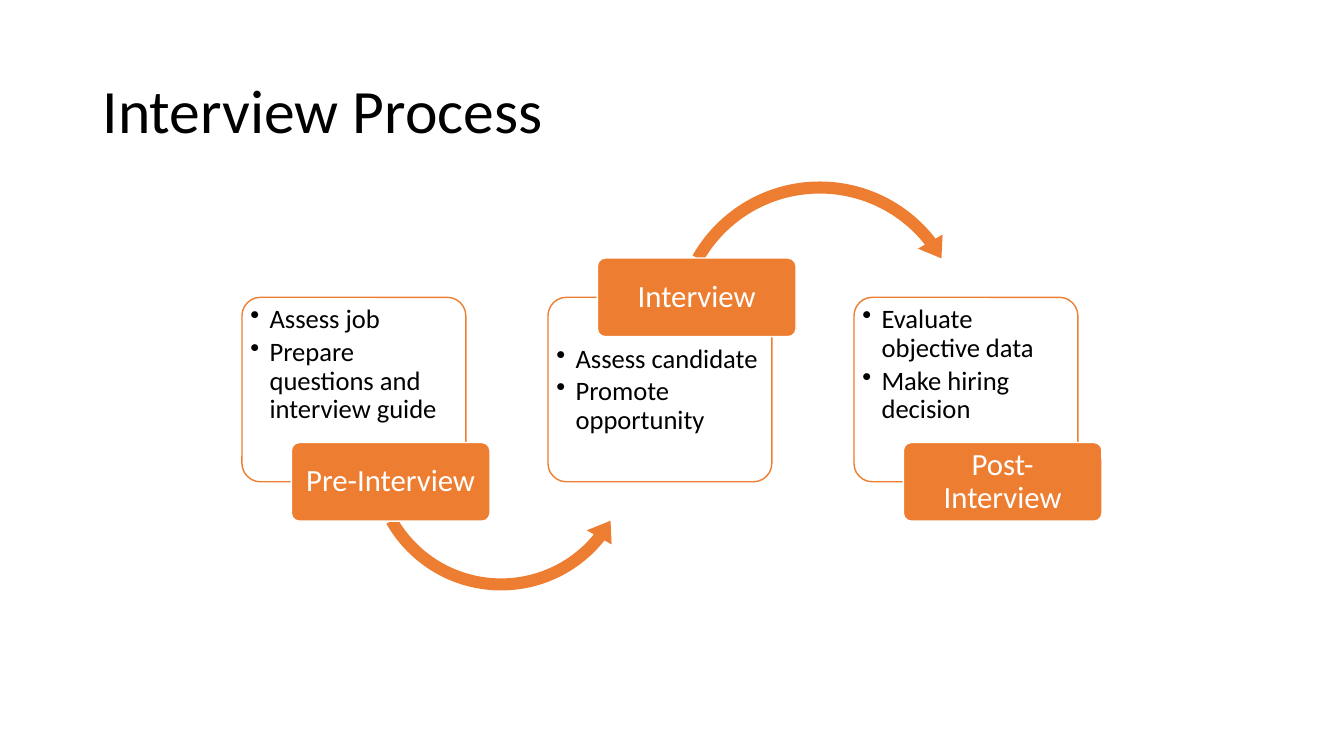
from lxml import etree
from pptx import Presentation
from pptx import util as u
from pptx.dml.color import RGBColor
from pptx.enum import shapes, text
from pptx.oxml.ns import qn

COLORS = {"accent": "ED7D31", "white": "FFFFFF", "ink": "000000"}
FONT = "Calibri"

FIRST_COLUMN, COLUMN_STEP = 2.4, 3.035
PANEL_TOP, PANEL_WIDTH, PANEL_HEIGHT = 2.95, 2.22, 1.83
LABEL_SHIFT, LABEL_WIDTH, LABEL_HEIGHT = 0.49, 1.97, 0.78
PANEL_INSET, RAISED_INSET = 0.03, 0.42

# label, bullet points, whether the label sits on the panel's top edge
STAGES = [
    ("Pre-Interview", ["Assess job", "Prepare questions and interview guide"], False),
    ("Interview", ["Assess candidate", "Promote opportunity"], True),
    ("Post- Interview", ["Evaluate objective data", "Make hiring decision"], False),
]


def color(name):
    return RGBColor.from_string(COLORS[name])


def add_bullet(para, indent=0.19):
    properties = para._p.get_or_add_pPr()
    properties.set("marL", str(u.Inches(indent)))
    properties.set("indent", str(-u.Inches(indent)))
    etree.SubElement(properties, qn("a:buChar")).set("char", "•")


def write(box, lines, size, ink="ink", align="LEFT", anchor="MIDDLE",
          margins=(0.1, 0.05, 0.1, 0.05), bullets=False, after=0):
    """Fill a box with one paragraph per line; margins run left, top, right, bottom."""
    frame = box.text_frame
    frame.word_wrap = True
    frame.vertical_anchor = text.MSO_ANCHOR[anchor]
    (frame.margin_left, frame.margin_top,
     frame.margin_right, frame.margin_bottom) = map(u.Inches, margins)
    for index, line in enumerate(lines):
        para = frame.add_paragraph() if index else frame.paragraphs[0]
        if bullets:
            add_bullet(para)
        para.alignment = text.PP_ALIGN[align]
        para.line_spacing = 0.9
        para.space_after = u.Pt(after)
        span = para.add_run()
        span.text = line
        span.font.name = FONT
        span.font.size = u.Pt(size)
        span.font.color.rgb = color(ink)


def add_figure(page, kind, place, adjustments, fill, line=None):
    figure = page.shapes.add_shape(shapes.MSO_SHAPE[kind], *map(u.Inches, place))
    figure.shadow.inherit = False
    for index, value in enumerate(adjustments):
        figure.adjustments[index] = value
    figure.fill.solid()
    figure.fill.fore_color.rgb = color(fill)
    if line:
        figure.line.color.rgb = color(line)
        figure.line.width = u.Pt(1)
    else:
        figure.line.fill.background()
    return figure


def add_panel(page, left, points, raised):
    panel = add_figure(page, "ROUNDED_RECTANGLE",
                       (left, PANEL_TOP, PANEL_WIDTH, PANEL_HEIGHT),
                       [0.1], "white", "accent")
    top = RAISED_INSET if raised else PANEL_INSET
    write(panel, points, 19, anchor="TOP", bullets=True, after=2.8,
          margins=(PANEL_INSET, top, PANEL_INSET, PANEL_INSET))


def add_label(page, left, name, raised):
    """Place a label centred on the top or bottom edge of its panel."""
    edge = PANEL_TOP if raised else PANEL_TOP + PANEL_HEIGHT
    label = add_figure(page, "ROUNDED_RECTANGLE",
                       (left + LABEL_SHIFT, edge - LABEL_HEIGHT / 2,
                        LABEL_WIDTH, LABEL_HEIGHT),
                       [0.1], "accent", "white")
    write(label, [name], 22, ink="white", align="CENTER",
          margins=(0.05, 0.03, 0.05, 0.03))


def add_arrow(page, kind, left, top, size, adjustments):
    add_figure(page, kind, (left, top, size, size), adjustments, "accent")


def main():
    deck = Presentation()
    deck.slide_width, deck.slide_height = u.Inches(13.33), u.Inches(7.5)
    page = deck.slides.add_slide(deck.slide_layouts[6])

    title = page.shapes.add_textbox(*map(u.Inches, (0.92, 0.4, 11.5, 1.45)))
    write(title, ["Interview Process"], 44)

    columns = [FIRST_COLUMN + COLUMN_STEP * index for index in range(len(STAGES))]
    for left, (_, points, raised) in zip(columns, STAGES):
        add_panel(page, left, points, raised)
    add_arrow(page, "LEFT_CIRCULAR_ARROW", 3.58, 3.16, 2.78,
              [0.043, 5.507, 23.262, 90.245, 0.051])
    add_arrow(page, "CIRCULAR_ARROW", 6.6, 1.72, 3.06,
              [0.039, 4.949, 193.296, 125.755, 0.046])
    for left, (name, _, raised) in zip(columns, STAGES):
        add_label(page, left, name, raised)

    deck.save("out.pptx")


if __name__ == "__main__":
    main()
